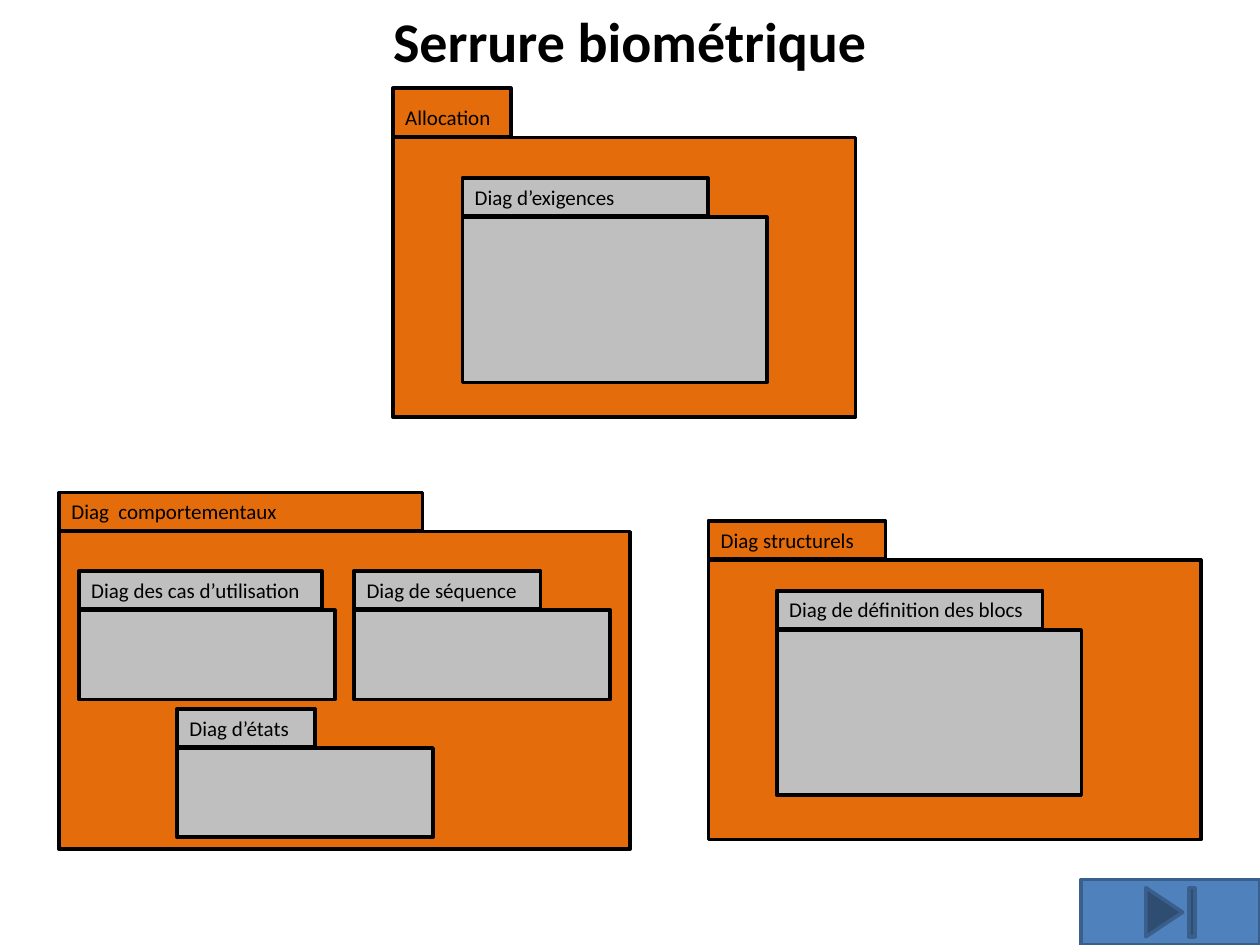
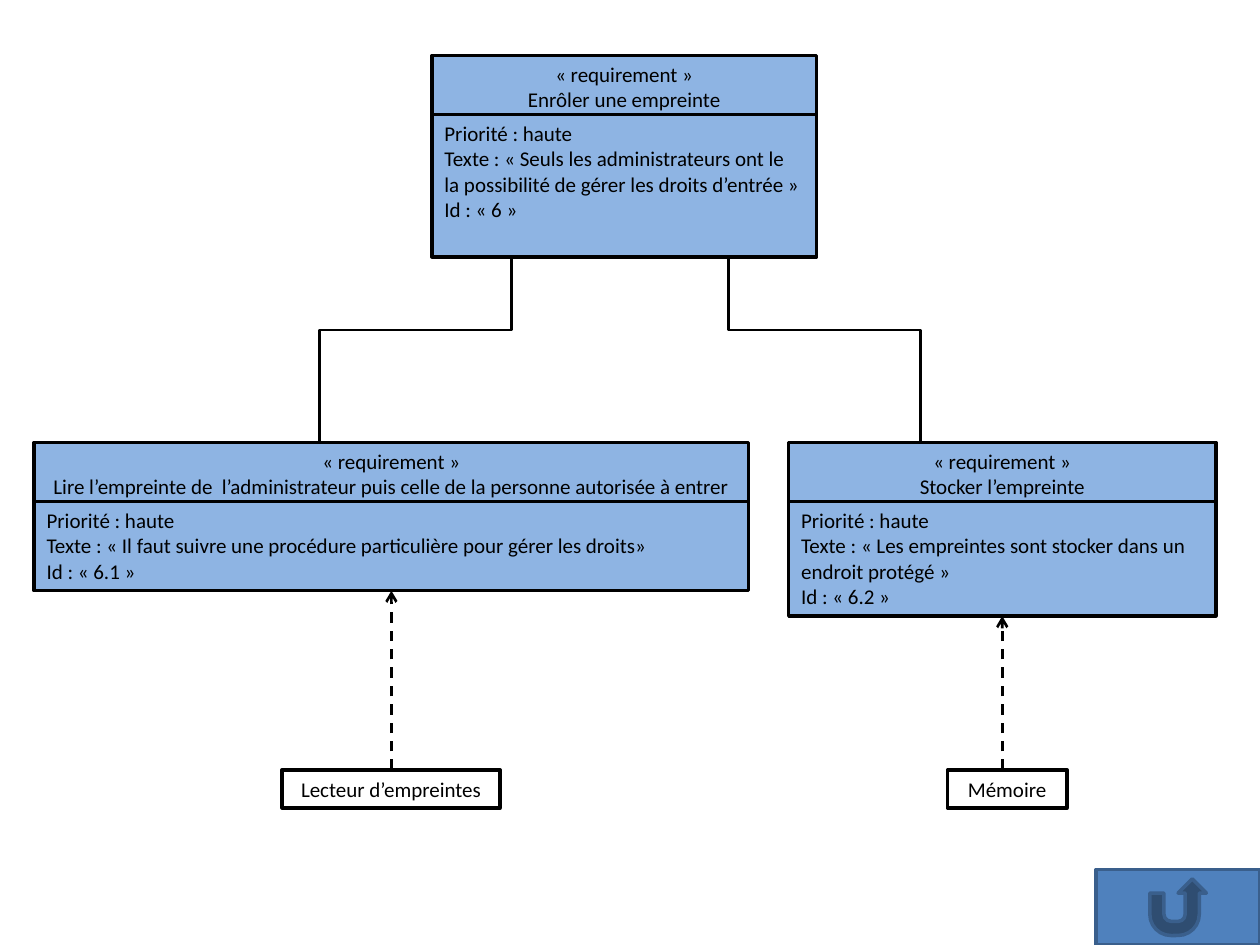
from dataclasses import dataclass

from lxml import etree
from pptx import Presentation
from pptx.dml.color import RGBColor
from pptx.enum import dml, shapes, text
from pptx.oxml import ns
from pptx.util import Cm, Pt


@dataclass(frozen=True)
class Theme:
    font: str = "Calibri"
    ink: str = "000000"
    group: str = "E46C0A"
    diagram: str = "BFBFBF"
    requirement: str = "8EB4E3"
    button: str = "4F81BD"
    button_line: str = "3A5F8C"
    title_size: int = 32
    text_size: int = 12
    border: float = 2
    link: float = 1.5


T = Theme()
LEFT, CENTER = text.PP_ALIGN.LEFT, text.PP_ALIGN.CENTER
TOP, BOTTOM = text.MSO_ANCHOR.TOP, text.MSO_ANCHOR.BOTTOM
MSO = shapes.MSO_SHAPE

# All lengths are in centimetres.
TITLE = "Serrure biométrique"
LABEL_H = 0.77
TAB_GAP = 0.02
# label, fill, x, y, tab width, tab height, body width, body height
PACKAGES = [
    ("Allocation", T.group, 7.92, 1.78, 2.38, 0.97, 9.33, 5.64),
    ("Diag d’exigences", T.diagram, 9.32, 3.59, 4.95, LABEL_H, 6.14, 3.33),
    ("Diag  comportementaux", T.group, 1.19, 9.93, 7.33, LABEL_H, 11.51, 6.4),
    ("Diag des cas d’utilisation", T.diagram, 1.59, 11.51, 4.9, LABEL_H, 5.16, 1.8),
    ("Diag de séquence", T.diagram, 7.14, 11.51, 3.76, LABEL_H, 5.16, 1.8),
    ("Diag d’états", T.diagram, 3.57, 14.29, 2.78, LABEL_H, 5.16, 1.8),
    ("Diag structurels", T.group, 14.28, 10.5, 3.57, LABEL_H, 9.93, 5.64),
    ("Diag de définition des blocs", T.diagram, 15.66, 11.91, 5.36, LABEL_H, 6.14, 3.33),
]
END_BUTTON = (21.79, 17.73, 3.61, 1.32)

HEAD_H, BODY_OFFSET = 1.3, 1.19
# name, text, id, x, y, width, body height
REQUIREMENTS = [
    ("Enrôler une empreinte",
     "« Seuls les administrateurs ont le la possibilité de gérer les droits d’entrée »",
     "6", 8.71, 1.12, 7.75, 2.87),
    ("Stocker l’empreinte",
     "« Les empreintes sont stocker dans un endroit protégé »",
     "6.2", 15.9, 8.92, 8.61, 2.31),
    ("Lire l’empreinte de  l’administrateur puis celle de la personne autorisée à entrer",
     "« Il faut suivre une procédure particulière pour gérer les droits»",
     "6.1", 0.69, 8.92, 14.4, 1.8),
]
# name, id of the satisfied requirement, x, width
COMPONENTS = [
    ("Lecteur d’empreintes", "6.1", 5.69, 4.39),
    ("Mémoire", "6.2", 19.1, 2.41),
]
COMPONENT_Y = 15.52
BRANCH_AXIS, BRANCH_TOP, BRANCH_BOTTOM = 12.5, 4.37, 8.94
BRANCH_START, BRANCH_END = 2.19, 6.06
RETURN_BUTTON = (22.1, 17.53, 3.3, 1.52)


def rgb(colour):
    return RGBColor.from_string(colour)


def write(s, lines, size=T.text_size, align=LEFT, anchor=TOP, bold=False):
    tf = s.text_frame
    tf.word_wrap = True
    tf.vertical_anchor = anchor
    tf.text = "\n".join(lines)
    for p in tf.paragraphs:
        p.alignment = align
        for r in p.runs:
            r.font.name, r.font.size, r.font.bold = T.font, Pt(size), bold
            r.font.color.rgb = rgb(T.ink)


def add_box(sp, box, fill=None, line=T.ink, kind=MSO.RECTANGLE):
    s = sp.add_shape(kind, *map(Cm, box))
    s.shadow.inherit = False
    if fill:
        s.fill.solid()
        s.fill.fore_color.rgb = rgb(fill)
    else:
        s.fill.background()
    s.line.color.rgb = rgb(line)
    s.line.width = Pt(T.border)
    return s


def add_link(sp, kind, x1, y1, x2, y2):
    c = sp.add_connector(kind, Cm(x1), Cm(y1), Cm(x2), Cm(y2))
    c.line.color.rgb = rgb(T.ink)
    c.line.width = Pt(T.link)
    etree.SubElement(c._element.spPr, ns.qn("a:effectLst"))
    return c


def add_branch(sp, x1, y1, x2, y2):
    """Elbow that leaves downwards: a horizontal one turned about its centre."""
    side = 1 if x2 > x1 else -1
    cx, cy = (x1 + x2) / 2, (y1 + y2) / 2
    half_w, half_h = side * (y2 - y1) / 2, abs(x2 - x1) / 2
    c = add_link(sp, shapes.MSO_CONNECTOR.ELBOW,
                 cx + half_w, cy - half_h, cx - half_w, cy + half_h)
    angle = 270 if side > 0 else 90
    if side < 0:
        c.begin_x, c.end_x = Cm(cx + half_w), Cm(cx - half_w)
    c._element.spPr.find(ns.qn("a:xfrm")).set("rot", str(angle * 60000))


def add_dashed_arrow(sp, x, y1, y2):
    c = add_link(sp, shapes.MSO_CONNECTOR.STRAIGHT, x, y1, x, y2)
    c.line.dash_style = dml.MSO_LINE.DASH
    etree.SubElement(c.line._get_or_add_ln(), ns.qn("a:tailEnd"), type="arrow")


def add_package(sp, label, fill, x, y, tab_w, tab_h, body_w, body_h):
    add_box(sp, (x, y + tab_h + TAB_GAP, body_w, body_h), fill)
    tab = add_box(sp, (x, y, tab_w, tab_h), fill)
    write(tab, [label], anchor=BOTTOM if tab_h > LABEL_H else TOP)


def add_requirement(sp, name, wording, ident, x, y, w, body_h):
    head = add_box(sp, (x, y, w, HEAD_H), T.requirement)
    write(head, ["« requirement »", name], align=CENTER)
    body = add_box(sp, (x, y + BODY_OFFSET, w, body_h), T.requirement)
    write(body, ["Priorité : haute", f"Texte : {wording}", f"Id : « {ident} »"])


def build_overview(prs):
    s = prs.slides.add_slide(prs.slide_layouts.get_by_name("Title Only"))
    title = s.shapes.title
    title.left, title.top, title.width, title.height = 0, 0, prs.slide_width, Cm(1.63)
    write(title, [TITLE], T.title_size, CENTER, bold=True)
    for package in PACKAGES:
        add_package(s.shapes, *package)
    add_box(s.shapes, END_BUTTON, T.button, T.button_line, MSO.ACTION_BUTTON_END)


def build_requirements(prs):
    s = prs.slides.add_slide(prs.slide_layouts.get_by_name("Blank"))
    sp = s.shapes
    for side in (-1, 1):
        add_branch(sp, BRANCH_AXIS + side * BRANCH_START, BRANCH_TOP,
                   BRANCH_AXIS + side * BRANCH_END, BRANCH_BOTTOM)
    foot = {}
    for requirement in REQUIREMENTS:
        add_requirement(sp, *requirement)
        ident, x, y, w, body_h = requirement[2:]
        foot[ident] = (x + w / 2, y + BODY_OFFSET + body_h)
    for name, ident, x, w in COMPONENTS:
        arrow_x, arrow_y = foot[ident]
        add_dashed_arrow(sp, arrow_x, COMPONENT_Y, arrow_y)
        write(add_box(sp, (x, COMPONENT_Y, w, LABEL_H)), [name], align=CENTER)
    add_box(sp, RETURN_BUTTON, T.button, T.button_line, MSO.ACTION_BUTTON_RETURN)


def main():
    prs = Presentation()
    prs.slide_width, prs.slide_height = Cm(25.4), Cm(19.05)
    build_overview(prs)
    build_requirements(prs)
    prs.save("out.pptx")


if __name__ == "__main__":
    main()
